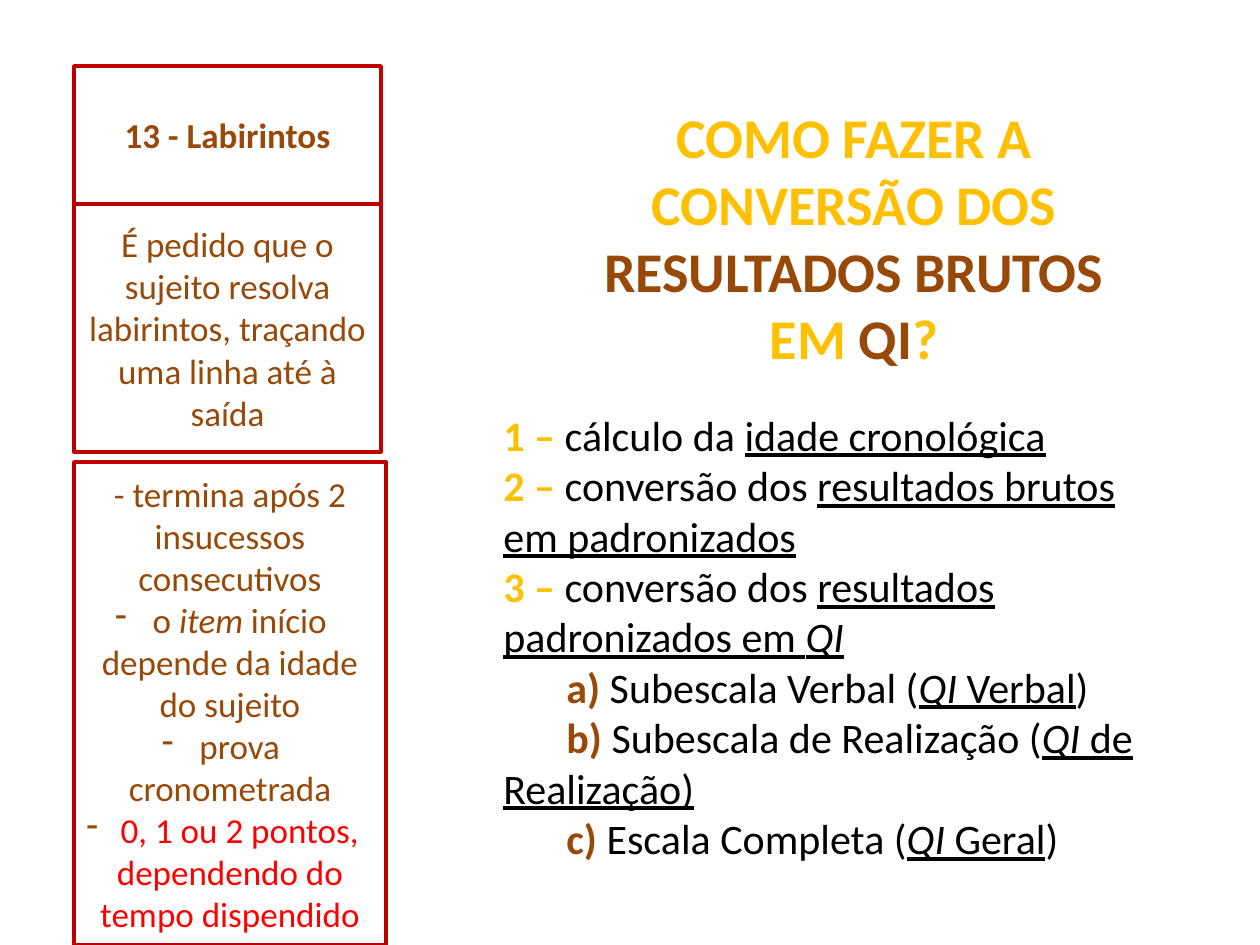
from dataclasses import dataclass
from functools import partial

from lxml.etree import SubElement
from pptx import Presentation
from pptx.dml.color import RGBColor as Color
from pptx.enum.shapes import MSO_SHAPE as Shape
from pptx.enum.text import MSO_ANCHOR as Anchor, MSO_AUTO_SIZE as AutoSize, PP_ALIGN as Align
from pptx.oxml.ns import qn
from pptx.util import Pt

EMU_PER_PX = 914400 / 126


def px(length):
    return round(length * EMU_PER_PX)


@dataclass(frozen=True)
class Theme:
    font: str = "Calibri"
    border: str = "C00000"
    brown: str = "984807"
    gold: str = "FFC000"
    red: str = "FF0000"
    black: str = "000000"
    title_size: int = 32
    step_size: int = 24
    card_size: int = 20
    border_width: int = 2


def add_run(paragraph, text, *, font, size, color, bold=False, italic=False, underline=False):
    run = paragraph.add_run()
    run.text = text
    run.font.name = font
    run.font.size = Pt(size)
    run.font.color.rgb = Color.from_string(color)
    run.font.bold = bold
    run.font.italic = italic
    run.font.underline = underline


def styled(text, **style):
    return text, style


class SlideBuilder:
    def __init__(self, slide, theme):
        self.slide = slide
        self.theme = theme

    def fill_text(self, frame, paragraphs, align, bullets_from=None, **base):
        frame.word_wrap = True
        for index, runs in enumerate(paragraphs):
            paragraph = frame.paragraphs[0] if index == 0 else frame.add_paragraph()
            paragraph.alignment = align
            if bullets_from is not None and index >= bullets_from:
                self.add_dash(paragraph)
            for text, style in runs:
                add_run(paragraph, text, **{"font": self.theme.font, **base, **style})

    def add_dash(self, paragraph):
        properties = paragraph._p.get_or_add_pPr()
        SubElement(properties, qn("a:buFontTx"))
        SubElement(properties, qn("a:buChar")).set("char", "-")

    def card(self, left, top, width, height, paragraphs, **options):
        shape = self.slide.shapes.add_shape(
            Shape.RECTANGLE, px(left), px(top), px(width), px(height))
        shape.shadow.inherit = False
        shape.fill.background()
        shape.line.color.rgb = Color.from_string(self.theme.border)
        shape.line.width = Pt(self.theme.border_width)
        shape.text_frame.vertical_anchor = Anchor.MIDDLE
        self.fill_text(shape.text_frame, paragraphs, Align.CENTER,
                       size=self.theme.card_size, color=self.theme.brown, **options)

    def text_box(self, left, top, width, height, paragraphs, align, **options):
        shape = self.slide.shapes.add_textbox(px(left), px(top), px(width), px(height))
        self.fill_text(shape.text_frame, paragraphs, align, **options)
        shape.text_frame.auto_size = AutoSize.SHAPE_TO_FIT_TEXT


def main():
    theme = Theme()
    presentation = Presentation()
    presentation.slide_width, presentation.slide_height = px(1260), px(945)
    slide = presentation.slides.add_slide(presentation.slide_layouts[6])
    builder = SlideBuilder(slide, theme)

    builder.card(74, 66, 307, 138, [[styled("13 - Labirintos", bold=True)]])
    builder.card(74, 204, 307, 248, [[styled(
        "É pedido que o sujeito resolva labirintos, traçando uma linha até à saída")]])
    builder.card(74, 462, 312, 483, [
        [styled("- termina após 2 insucessos consecutivos")],
        [styled(" o "), styled("item", italic=True), styled(" início depende da idade do sujeito")],
        [styled(" prova cronometrada")],
        [styled(" "), styled("0, 1 ou 2 pontos, dependendo do tempo dispendido", color=theme.red)],
    ], bullets_from=1)

    brown = partial(styled, color=theme.brown)
    builder.text_box(561, 96, 586, 285, [[
        styled("COMO FAZER A CONVERSÃO DOS "), brown("RESULTADOS BRUTOS "),
        styled("EM "), brown("QI"), styled("?"),
    ]], Align.CENTER, size=theme.title_size, color=theme.gold, bold=True)

    number = partial(styled, color=theme.gold, bold=True)
    letter = partial(styled, color=theme.brown, bold=True)
    key = partial(styled, underline=True)
    iq = key("QI", italic=True)
    builder.text_box(491, 403, 674, 471, [
        [number("1 –"), styled(" cálculo da "), key("idade cronológica")],
        [number("2 –"), styled(" conversão dos "), key("resultados brutos em padronizados")],
        [number("3 – "), styled("conversão dos "), key("resultados padronizados em "), iq],
        [letter("\ta)"), styled(" Subescala Verbal ("), iq, key(" Verbal"), styled(")")],
        [letter("\tb)"), styled(" Subescala de Realização ("), iq, key(" de Realização)")],
        [letter("\tc)"), styled(" Escala Completa ("), iq, key(" Geral"), styled(")")],
    ], Align.LEFT, size=theme.step_size, color=theme.black)

    presentation.save("out.pptx")


if __name__ == "__main__":
    main()
